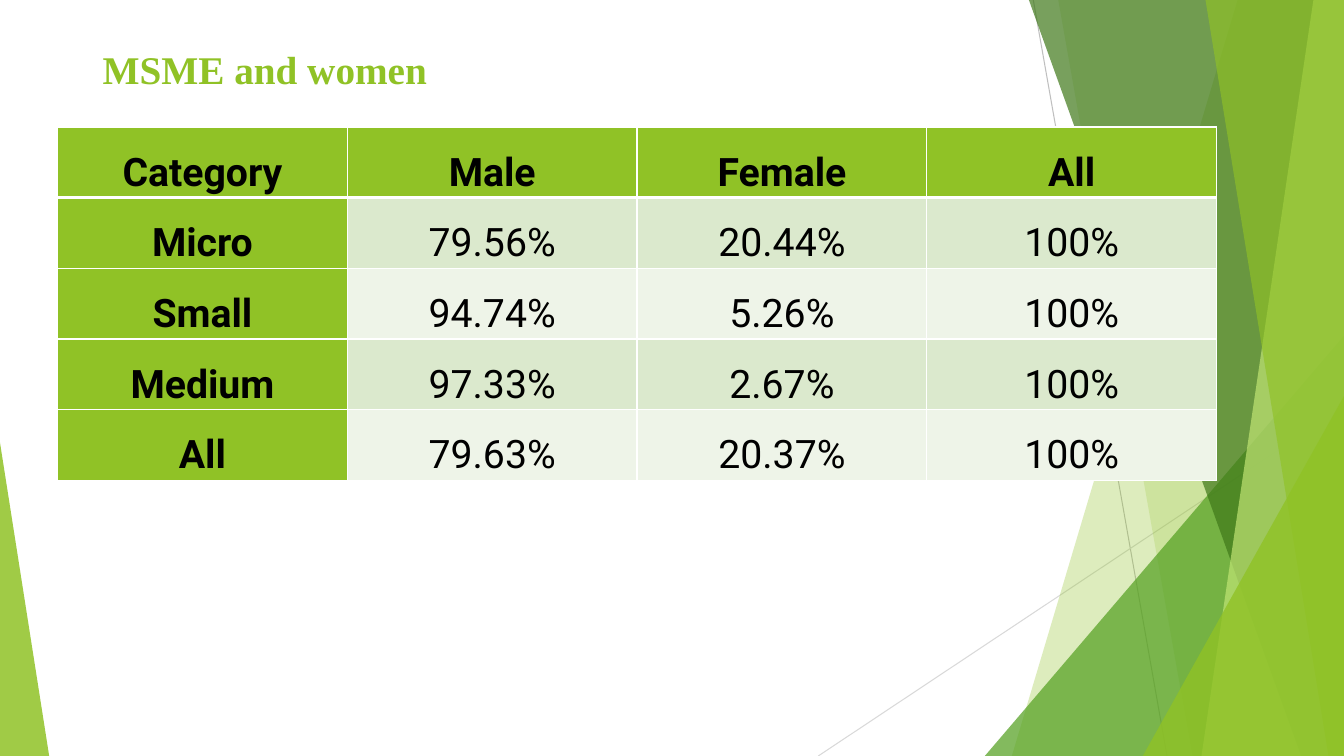
import pptx
import pptx.dml.color
import pptx.enum.shapes
import pptx.enum.text
import pptx.oxml
import pptx.oxml.ns
import pptx.util
from lxml import etree

Cm = pptx.util.Cm
Pt = pptx.util.Pt
RGB = pptx.dml.color.RGBColor
qn = pptx.oxml.ns.qn

LIME = RGB(0x90, 0xC2, 0x26)
GREEN = RGB(0x54, 0xA0, 0x21)
DARK_GREEN = RGB(0x3F, 0x78, 0x19)
PALE_LIME = RGB(0xC0, 0xE4, 0x74)
BAND_DARK = RGB(0xDB, 0xE9, 0xCD)
BAND_LIGHT = RGB(0xEE, 0xF4, 0xE8)
GREY = RGB(0xBF, 0xBF, 0xBF)
LIGHT_GREY = RGB(0xD9, 0xD9, 0xD9)
BLACK = RGB(0, 0, 0)
WHITE = RGB(0xFF, 0xFF, 0xFF)

PAGE_WIDTH, PAGE_HEIGHT = Cm(33.87), Cm(19.05)

# Facets from back to front, lengths in cm from the top left of their box.
# A strip has the x of its slanted edge at top and bottom;
# a corner has the x and y where its triangle starts.
FACETS = [
    ("strip", 31.19, 25.5, LIME, 30),
    ("strip", 26.67, 30.05, LIME, 20),
    ("corner", 24.82, 8.46, GREEN, 72),
    ("strip", 25.93, 32.79, DARK_GREEN, 70),
    ("strip", 33.1, 30.28, PALE_LIME, 70),
    ("strip", 30.38, 33.48, LIME, 65),
    ("corner", 28.8, 9.98, LIME, 80),
]
HAIRLINES = [
    (26.04, 0, 29.41, 19.05, GREY),
    (33.87, 10.24, 20.62, 19.05, LIGHT_GREY),
]
SHARES = [
    ["Category", "Male", "Female", "All"],
    ["Micro", "79.56%", "20.44%", "100%"],
    ["Small", "94.74%", "5.26%", "100%"],
    ["Medium", "97.33%", "2.67%", "100%"],
    ["All", "79.63%", "20.37%", "100%"],
]


def paint(shape, color, opacity):
    shape.shadow.inherit = False
    shape.fill.solid()
    shape.fill.fore_color.rgb = color
    shape.line.fill.background()
    tint = shape.element.spPr.find(".//" + qn("a:srgbClr"))
    etree.SubElement(tint, qn("a:alpha"), val=str(opacity * 1000))


def add_triangle(page, left, top, width, height, apex, color, opacity):
    triangle = page.shapes.add_shape(
        pptx.enum.shapes.MSO_SHAPE.ISOSCELES_TRIANGLE, left, top, width, height)
    triangle.adjustments[0] = apex
    paint(triangle, color, opacity)


def add_hairlines(page, left, top):
    for x1, y1, x2, y2, color in HAIRLINES:
        line = page.shapes.add_connector(
            pptx.enum.shapes.MSO_CONNECTOR.STRAIGHT,
            left + Cm(x1), top + Cm(y1), left + Cm(x2), top + Cm(y2))
        line.line.color.rgb = color
        line.line.width = Pt(0.75)
        etree.SubElement(line._element.spPr, qn("a:effectLst"))


def add_facets(page, left, top, width, height):
    right, bottom = left + width, top + height
    for kind, first, second, color, opacity in FACETS:
        start = left + Cm(first)
        if kind == "corner":
            peak = top + Cm(second)
            add_triangle(page, start, peak, right - start, bottom - peak,
                         1, color, opacity)
        else:
            outline = page.shapes.build_freeform(start, top)
            outline.add_line_segments(
                [(right, top), (right, bottom), (left + Cm(second), bottom)],
                close=True)
            paint(outline.convert_to_shape(), color, opacity)


def add_span(para, text, font, color, bold):
    span = para.add_run()
    span.text = text
    span.font.name = font
    span.font.size = Pt(28)
    span.font.bold = bold
    span.font.color.rgb = color


def add_title(page, left, top, width, height):
    box = page.shapes.add_textbox(left, top, width, height)
    box.text_frame.word_wrap = True
    add_span(box.text_frame.paragraphs[0], "MSME and women",
             "Times New Roman", LIME, True)


def set_borders(cell, widths):
    for side, points in widths.items():
        edge = etree.SubElement(cell._tc.get_or_add_tcPr(),
                                qn("a:ln" + side), w=str(Pt(points)))
        fill = etree.SubElement(edge, qn("a:solidFill"))
        etree.SubElement(fill, qn("a:srgbClr"), val=str(WHITE))


def add_share_table(page, left, top, width, height):
    table = page.shapes.add_table(
        len(SHARES), len(SHARES[0]), left, top, width, height).table
    for r, row in enumerate(SHARES):
        for c, text in enumerate(row):
            cell = table.cell(r, c)
            heading = r == 0 or c == 0
            # Borders go before the fill; a thick rule closes the header
            set_borders(cell, {"L": 1, "R": 1,
                               "T": 3 if r == 1 else 1,
                               "B": 3 if r == 0 else 1})
            cell.fill.solid()
            band = BAND_DARK if r % 2 else BAND_LIGHT
            cell.fill.fore_color.rgb = LIME if heading else band
            cell.margin_left = cell.margin_right = Cm(0.18)
            cell.margin_top = cell.margin_bottom = 0
            para = cell.text_frame.paragraphs[0]
            para.alignment = pptx.enum.text.PP_ALIGN.CENTER
            para.line_spacing = 1.5
            para.space_after = Pt(8)
            add_span(para, text, "Roboto", BLACK, heading)


def main():
    deck = pptx.Presentation()
    deck.slide_width, deck.slide_height = PAGE_WIDTH, PAGE_HEIGHT
    page = deck.slides.add_slide(deck.slide_layouts[6])

    # Background decoration
    add_hairlines(page, 0, 0)
    add_facets(page, 0, 0, PAGE_WIDTH, PAGE_HEIGHT)
    add_triangle(page, 0, Cm(11.15), Cm(1.24), Cm(7.9), 0, LIME, 85)

    # Content
    add_title(page, Cm(2.34), Cm(1.02), Cm(29.21), Cm(3.99))
    add_share_table(page, Cm(1.45), Cm(3.2), Cm(29.21), Cm(6.85))

    deck.save("out.pptx")


if __name__ == "__main__":
    main()
